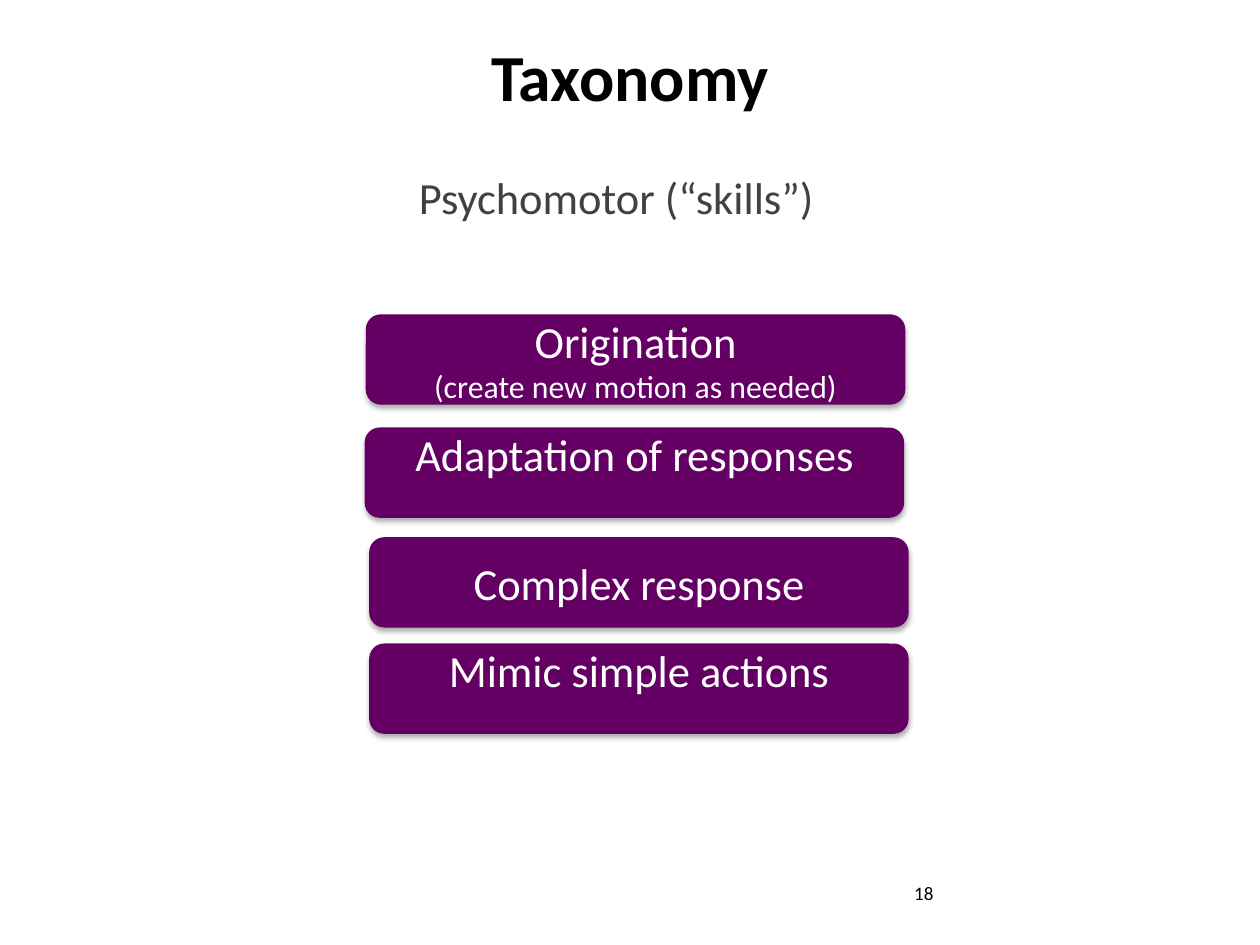
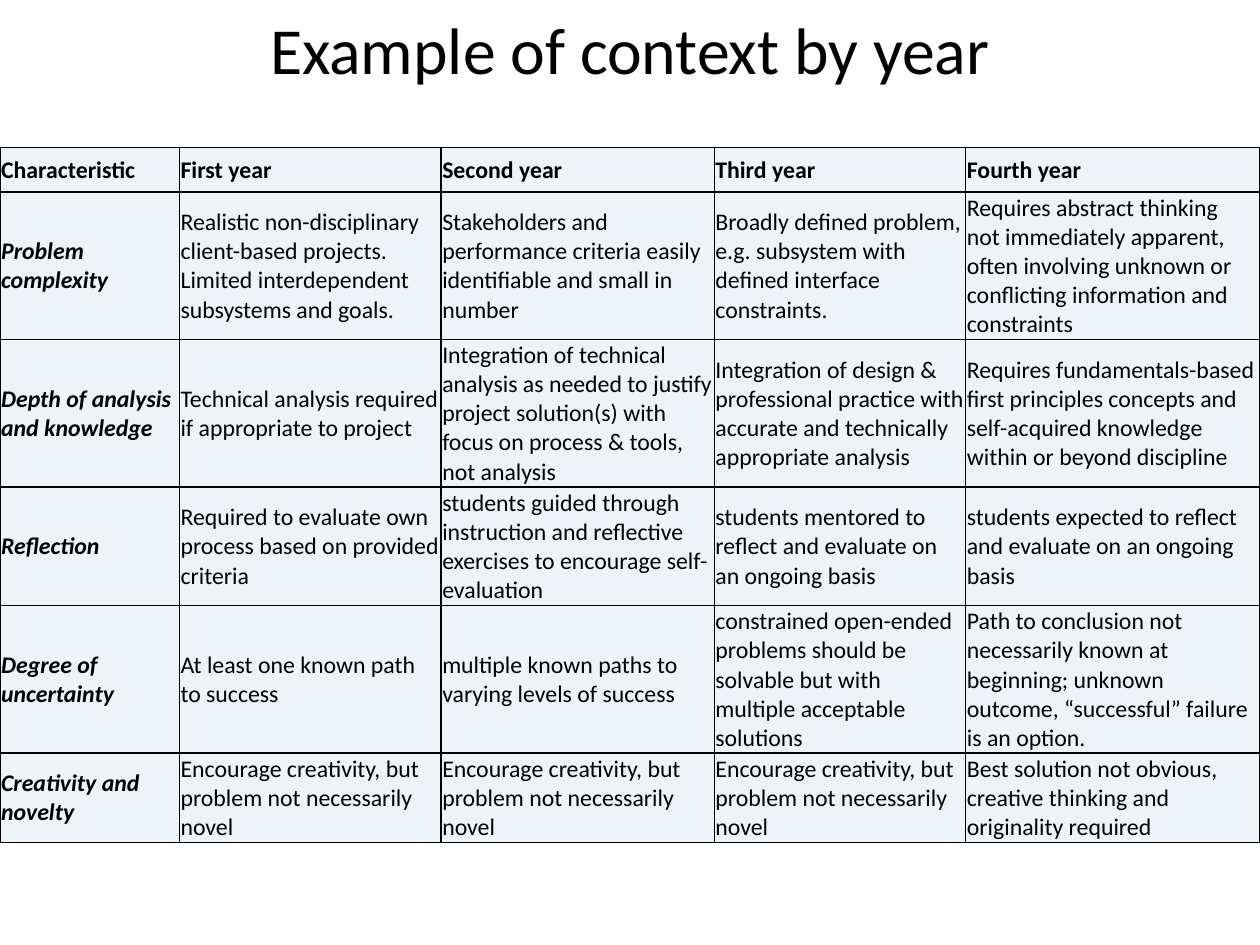
from pptx import Presentation
from pptx.dml.color import RGBColor as RGB
from pptx.enum.shapes import MSO_SHAPE as Shape
from pptx.enum.text import MSO_ANCHOR as Anchor, PP_ALIGN as Align
from pptx.oxml import parse_xml
from pptx.oxml.ns import nsdecls, qn
from pptx.util import Cm, Inches, Pt

# Shared look
FONT = "Calibri"
HUES = {"ink": "000000", "grey": "414141", "plum": "640064",
        "white": "FFFFFF", "pale": "EEF3F7"}

# Skill levels: left, top, anchor, top inset, lines
LEVELS = [
    (3.2, 2.75, Anchor.MIDDLE, 0.05,
     ["Origination", "(create new motion as needed)"]),
    (3.19, 3.74, Anchor.TOP, -0.04, ["Adaptation of responses"]),
    (3.23, 4.7, Anchor.MIDDLE, 0.05, ["Complex response"]),
    (3.23, 5.63, Anchor.TOP, -0.04, ["Mimic simple actions"]),
]

# Context table
COLS = [1.57, 2.29, 2.39, 2.2, 2.57]
ROWS = [0.39, 1.29, 1.29, 1.04, 1.29, 0.78]
NOVEL = "Encourage creativity, but problem not necessarily novel"
CELLS = [
    ["Characteristic", "First year", "Second year", "Third year",
     "Fourth year"],
    ["Problem complexity",
     "Realistic non-disciplinary client-based projects. "
     "Limited interdependent subsystems and goals.",
     "Stakeholders and performance criteria easily identifiable "
     "and small in number",
     "Broadly defined problem, e.g. subsystem with defined interface "
     "constraints.",
     "Requires abstract thinking\vnot immediately apparent, often involving "
     "unknown or conflicting information and constraints"],
    ["Depth of analysis and knowledge",
     "Technical analysis required if appropriate to project",
     "Integration of technical analysis as needed to justify project "
     "solution(s) with focus on process & tools, not analysis",
     "Integration of design & professional practice with accurate and "
     "technically appropriate analysis",
     "Requires fundamentals-based first principles concepts and "
     "self-acquired knowledge within or beyond discipline"],
    ["Reflection",
     "Required to evaluate own process based on provided criteria",
     "students guided through instruction and reflective exercises to "
     "encourage self-evaluation",
     "students mentored to reflect and evaluate on an ongoing basis",
     "students expected to reflect and evaluate on an ongoing basis"],
    ["Degree of uncertainty",
     "At least one known path to success",
     "multiple known paths to varying levels of success",
     "constrained open-ended problems should be solvable but with multiple "
     "acceptable solutions",
     "Path to conclusion not necessarily known at beginning; unknown "
     "outcome, “successful” failure is an option."],
    ["Creativity and novelty", NOVEL, NOVEL, NOVEL,
     "Best solution not obvious, creative thinking and originality required"],
]


def color(name):
    return RGB.from_string(HUES[name])


def style(para, size, hue="ink", bold=False, slant=False, align=Align.LEFT):
    para.alignment = align
    font = para.font
    font.name, font.size = FONT, Pt(size)
    font.bold, font.italic = bold, slant
    font.color.rgb = color(hue)


def inset(item, left, top, right, bottom):
    item.margin_left, item.margin_top = Inches(left), Inches(top)
    item.margin_right, item.margin_bottom = Inches(right), Inches(bottom)


def new_slide(deck, text, top, height, bold=False):
    """Add a title-only slide and set its title."""
    slide = deck.slides.add_slide(deck.slide_layouts[5])
    title = slide.shapes.title
    title.left, title.top = Inches(0.55), Inches(top)
    title.width, title.height = Inches(9.92), Inches(height)
    frame = title.text_frame
    frame.text = text
    frame.vertical_anchor = Anchor.TOP
    inset(frame, 0.07, 0.03, 0.07, 0.03)
    style(frame.paragraphs[0], 41.4, bold=bold, align=Align.CENTER)
    return slide


def add_text(slide, text, box, size, hue="ink", align=Align.LEFT):
    frame = slide.shapes.add_textbox(*map(Inches, box)).text_frame
    frame.word_wrap = True
    frame.text = text
    style(frame.paragraphs[0], size, hue, align=align)


def add_shade(shape):
    """Give a shape a soft shadow below it."""
    shape.shadow.inherit = False
    shape._element.spPr.find(qn("a:effectLst")).append(parse_xml(
        f'<a:outerShdw {nsdecls("a")} blurRad="{Pt(3.5)}" dist="{Pt(2.2)}" '
        f'dir="5400000" rotWithShape="0"><a:srgbClr val="{HUES["ink"]}">'
        '<a:alpha val="32000"/></a:srgbClr></a:outerShdw>'))


def add_level(slide, left, top, anchor, pad, lines):
    box = map(Inches, (left, top, 4.72, 0.79))
    shape = slide.shapes.add_shape(Shape.ROUNDED_RECTANGLE, *box)
    shape.fill.solid()
    shape.fill.fore_color.rgb = color("plum")
    shape.line.fill.background()
    add_shade(shape)
    frame = shape.text_frame
    frame.text = "\n".join(lines)
    frame.vertical_anchor = anchor
    inset(frame, 0.1, pad, 0.1, 0.05)
    for para, size in zip(frame.paragraphs, (28, 20)):
        style(para, size, "white", align=Align.CENTER)


def add_edges(cell):
    props = cell._tc.get_or_add_tcPr()
    for side in "LRTB":
        props.append(parse_xml(
            f'<a:ln{side} {nsdecls("a")} w="{Pt(1)}"><a:solidFill>'
            f'<a:srgbClr val="{HUES["ink"]}"/></a:solidFill></a:ln{side}>'))


def add_grid(slide, left, top):
    size = (left, top, sum(COLS), sum(ROWS))
    table = slide.shapes.add_table(
        len(ROWS), len(COLS), *map(Inches, size)).table
    table.first_row = table.horz_banding = False
    for col, width in zip(table.columns, COLS):
        col.width = Inches(width)
    for r, (row, height) in enumerate(zip(table.rows, ROWS)):
        row.height = Inches(height)
        for c, cell in enumerate(row.cells):
            add_edges(cell)
            cell.fill.solid()
            cell.fill.fore_color.rgb = color("pale")
            cell.vertical_anchor = Anchor.MIDDLE
            inset(cell, 0.01, 0.01, 0.01, 0)
            cell.text = CELLS[r][c]
            style(cell.text_frame.paragraphs[0], 15,
                  bold=r == 0 or c == 0, slant=r > 0 and c == 0)


def main():
    deck = Presentation()
    deck.slide_width, deck.slide_height = Cm(28), Cm(21)

    # Skill levels
    slide = new_slide(deck, "Taxonomy", 0.28, 0.65, bold=True)
    add_text(slide, "Psychomotor (“skills”)", (3.39, 1.44, 4, 0.57), 28,
             "grey", Align.CENTER)
    for level in LEVELS:
        add_level(slide, *level)
    add_text(slide, "18", (7.9, 7.66, 2.57, 0.44), 12)

    # Context by year
    slide = new_slide(deck, "Example of context by year", 0.05, 0.74)
    add_grid(slide, 0, 1.29)

    deck.save("out.pptx")


if __name__ == "__main__":
    main()
